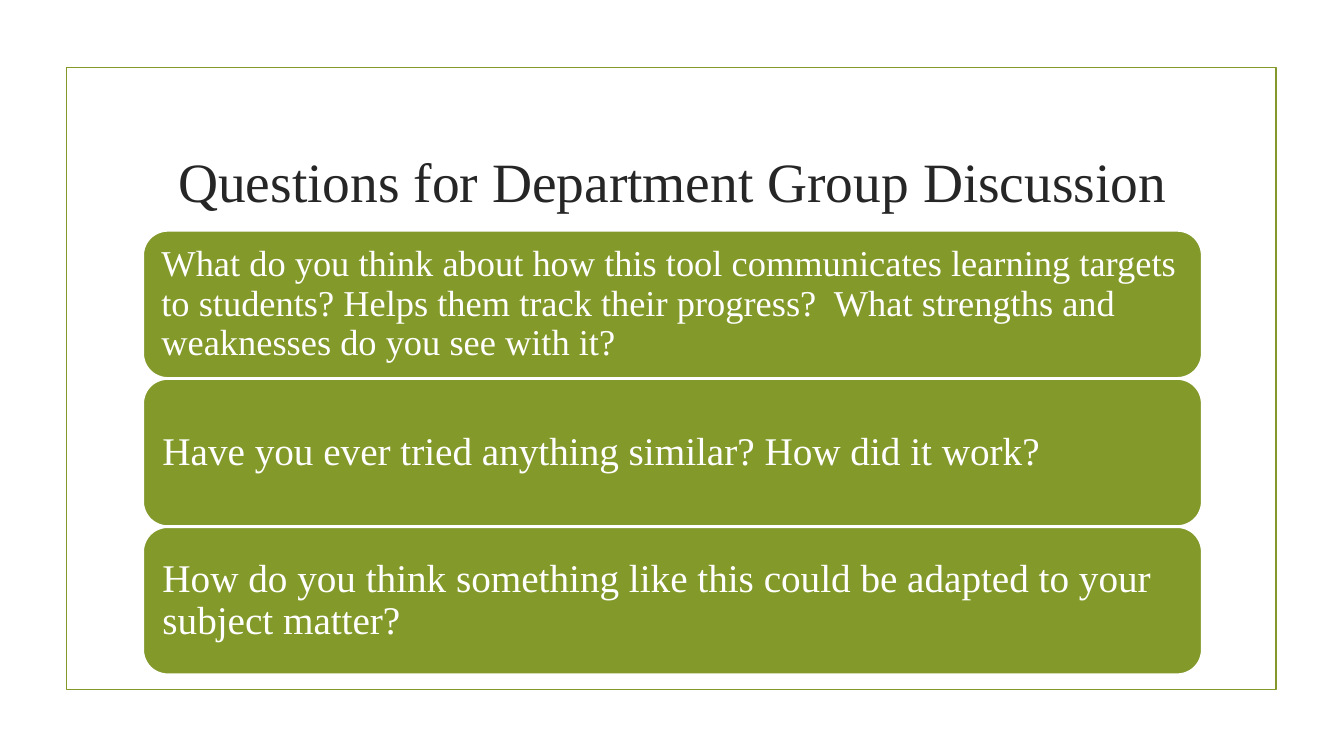
from pptx import Presentation
from pptx import util as u
from pptx.dml.color import RGBColor
from pptx.enum import shapes, text

TITLE = "Questions for Department Group Discussion"
QUESTIONS = [
    ("What do you think about how this tool communicates learning targets to students? "
     "Helps them track their progress?  What strengths and weaknesses do you see with it?", 26, 0.11),
    ("Have you ever tried anything similar? How did it work?", 28, 0.12),
    ("How do you think something like this could be adapted to your subject matter?", 28, 0.12),
]
COLORS = {"olive": "83992A", "ink": "262626", "white": "FFFFFF"}
FONT = "Times New Roman"
SLIDE_W, SLIDE_H = 13.33, 7.5
FRAME = (0.66, 0.67, 12, 6.17)
COLUMN_X, COLUMN_W = 1.42, 10.5
TITLE_Y, TITLE_H = 1.07, 1.43
CARD_Y, CARD_H, CARD_PITCH = 2.29, 1.46, 1.47


def color(name):
    return RGBColor.from_string(COLORS[name])


def add_box(slide, kind, box, line):
    sp = slide.shapes.add_shape(kind, *map(u.Inches, box))
    sp.shadow.inherit = False
    sp.line.color.rgb = color(line)
    sp.line.width = u.Pt(1.25)
    return sp


def write(sp, words, size, ink, align, inset):
    tf = sp.text_frame
    tf.word_wrap = True
    tf.auto_size = text.MSO_AUTO_SIZE.NONE
    tf.vertical_anchor = text.MSO_ANCHOR.MIDDLE
    tf.margin_left = tf.margin_right = tf.margin_top = tf.margin_bottom = u.Inches(inset)
    p = tf.paragraphs[0]
    p.alignment = align
    r = p.add_run()
    r.text = words
    r.font.name = FONT
    r.font.size = u.Pt(size)
    r.font.color.rgb = color(ink)
    return p


prs = Presentation()
prs.slide_width, prs.slide_height = u.Inches(SLIDE_W), u.Inches(SLIDE_H)
s = prs.slides.add_slide(prs.slide_layouts[5])

frame = add_box(s, shapes.MSO_SHAPE.RECTANGLE, FRAME, "olive")
frame.fill.background()

title = s.shapes.title
title.left, title.top, title.width, title.height = map(
    u.Inches, (COLUMN_X, TITLE_Y, COLUMN_W, TITLE_H))
write(title, TITLE, 39.6, "ink", text.PP_ALIGN.CENTER, 0.05)

for row, (question, size, inset) in enumerate(QUESTIONS):
    top = CARD_Y + row * CARD_PITCH
    card = add_box(s, shapes.MSO_SHAPE.ROUNDED_RECTANGLE,
                   (COLUMN_X, top, COLUMN_W, CARD_H), "white")
    card.fill.solid()
    card.fill.fore_color.rgb = color("olive")
    p = write(card, question, size, "white", text.PP_ALIGN.LEFT, inset)
    p.line_spacing = 0.9

prs.save("out.pptx")
